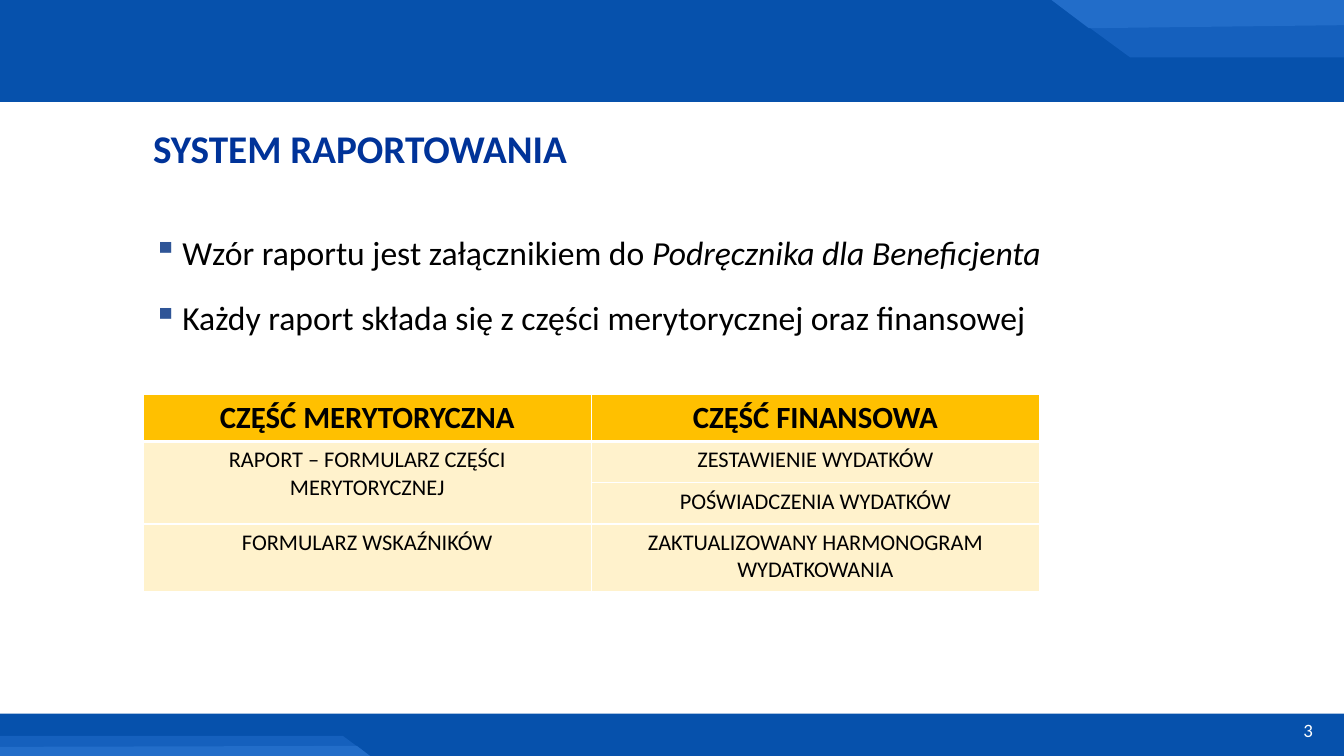
import pptx
import pptx.dml.color
import pptx.enum.shapes
import pptx.enum.text
import pptx.oxml
import pptx.oxml.ns
import pptx.util
from lxml import etree

Inches = pptx.util.Inches
Pt = pptx.util.Pt
Align = pptx.enum.text.PP_ALIGN

FONT = "Calibri"
COLORS = {
    "band": "0651AC",
    "stripe": "1560BD",
    "stripe_light": "226DC9",
    "title": "003399",
    "bullet": "2F5597",
    "text": "000000",
    "white": "FFFFFF",
    "header": "FFC000",
    "body": "FFF2CC",
}


def rgb(name):
    return pptx.dml.color.RGBColor.from_string(COLORS[name])


def set_font(paragraph, size, color, bold=False):
    font = paragraph.font
    font.name, font.size, font.bold = FONT, Pt(size), bold
    font.color.rgb = rgb(color)


def paint(shape, color):
    shape.shadow.inherit = False
    shape.fill.solid()
    shape.fill.fore_color.rgb = rgb(color)
    shape.line.fill.background()


def add_text_box(slide, box):
    frame = slide.shapes.add_textbox(*map(Inches, box)).text_frame
    frame.word_wrap = True
    return frame


def add_band(slide, box, stripes):
    """Full-width band with stripes whose points are relative to its corner."""
    left, top, width, height = box
    band = slide.shapes.add_shape(
        pptx.enum.shapes.MSO_SHAPE.RECTANGLE, *map(Inches, box))
    paint(band, "band")
    for color, points in stripes:
        corners = [(Inches(left + x), Inches(top + y)) for x, y in points]
        builder = slide.shapes.build_freeform(*corners[0], scale=1.0)
        builder.add_line_segments(corners[1:], close=True)
        paint(builder.convert_to_shape(), color)


def add_title(slide, box, text):
    paragraph = add_text_box(slide, box).paragraphs[0]
    paragraph.text = text
    paragraph.line_spacing = 0.9
    set_font(paragraph, 28, "title", bold=True)


def add_page_number(slide, box, number):
    paragraph = add_text_box(slide, box).paragraphs[0]
    paragraph.text = str(number)
    paragraph.alignment = Align.RIGHT
    set_font(paragraph, 13.5, "white")


def add_bullet(paragraph):
    properties = paragraph._p.get_or_add_pPr()
    properties.set("marL", str(Inches(0.29)))
    properties.set("indent", str(-Inches(0.29)))
    color = etree.SubElement(properties, pptx.oxml.ns.qn("a:buClr"))
    etree.SubElement(color, pptx.oxml.ns.qn("a:srgbClr"), val=COLORS["bullet"])
    etree.SubElement(properties, pptx.oxml.ns.qn("a:buChar"), char="▪")


def add_bullets(slide, box, items):
    """Each item is a pair: plain text and the italic text that follows it."""
    frame = add_text_box(slide, box)
    for index, (plain, italic) in enumerate(items):
        paragraph = frame.add_paragraph() if index else frame.paragraphs[0]
        if index:
            paragraph.space_before = Pt(18)
        add_bullet(paragraph)
        set_font(paragraph, 24, "text")
        paragraph.add_run().text = plain
        if italic:
            run = paragraph.add_run()
            run.text = italic
            run.font.italic = True


def set_borders(cell, widths):
    properties = cell._tc.get_or_add_tcPr()
    for side, width in zip("LRTB", widths):
        line = etree.SubElement(
            properties, pptx.oxml.ns.qn(f"a:ln{side}"), w=str(Pt(width)))
        fill = etree.SubElement(line, pptx.oxml.ns.qn("a:solidFill"))
        etree.SubElement(fill, pptx.oxml.ns.qn("a:srgbClr"), val=COLORS["white"])


def add_report_table(slide, box, row_heights, rows):
    """A None entry joins its cell to the one above."""
    table = slide.shapes.add_table(
        len(rows), len(rows[0]), *map(Inches, box)).table
    table.first_row = table.horz_banding = False
    for row, height in zip(table.rows, row_heights):
        row.height = Inches(height)
    for row_index, texts in enumerate(rows):
        is_header = row_index == 0
        for column_index, text in enumerate(texts):
            cell = table.cell(row_index, column_index)
            set_borders(cell, (1, 1, 3 if row_index == 1 else 1,
                               3 if is_header else 1))
            cell.fill.solid()
            cell.fill.fore_color.rgb = rgb("header" if is_header else "body")
            if text is None:
                table.cell(row_index - 1, column_index).merge(cell)
                continue
            paragraph = cell.text_frame.paragraphs[0]
            paragraph.text = text
            paragraph.alignment = Align.CENTER
            set_font(paragraph, 22 if is_header else 16, "text", is_header)


def main():
    presentation = pptx.Presentation()
    presentation.slide_width = Inches(13.33)
    presentation.slide_height = Inches(7.5)
    slide = presentation.slides.add_slide(presentation.slide_layouts[6])

    # Top and bottom bands
    add_band(slide, (0, -0.03, 13.33, 1.04), [
        ("stripe", [(13.33, 0), (10.39, 0), (11.21, 0.6), (13.33, 0.6)]),
        ("stripe_light", [(13.33, 0), (10.39, 0), (10.8, 0.31), (13.33, 0.28)]),
    ])
    add_band(slide, (0, 7.08, 13.33, 0.42), [
        ("stripe", [(0, 0.42), (3.67, 0.42), (3.4, 0.22), (0, 0.22)]),
        ("stripe_light", [(0, 0.42), (3.67, 0.42), (3.54, 0.32), (0, 0.33)]),
    ])
    add_page_number(slide, (12.18, 7.08, 0.94, 0.33), 3)

    # Title and bullets
    add_title(slide, (1.42, 1.24, 11.91, 0.62), "SYSTEM RAPORTOWANIA")
    add_bullets(slide, (1.42, 2.25, 11.31, 1.3), [
        ("Wzór raportu jest załącznikiem do ", "Podręcznika dla Beneficjenta"),
        ("Każdy raport składa się z części merytorycznej oraz finansowej", ""),
    ])

    # Parts of the report
    add_report_table(slide, (1.42, 3.91, 8.89, 1.96), (0.47, 0.41, 0.41, 0.67), [
        ("CZĘŚĆ MERYTORYCZNA", "CZĘŚĆ FINANSOWA"),
        ("RAPORT – FORMULARZ CZĘŚCI MERYTORYCZNEJ", "ZESTAWIENIE WYDATKÓW"),
        (None, "POŚWIADCZENIA WYDATKÓW"),
        ("FORMULARZ WSKAŹNIKÓW", "ZAKTUALIZOWANY HARMONOGRAM WYDATKOWANIA"),
    ])

    presentation.save("out.pptx")


if __name__ == "__main__":
    main()
